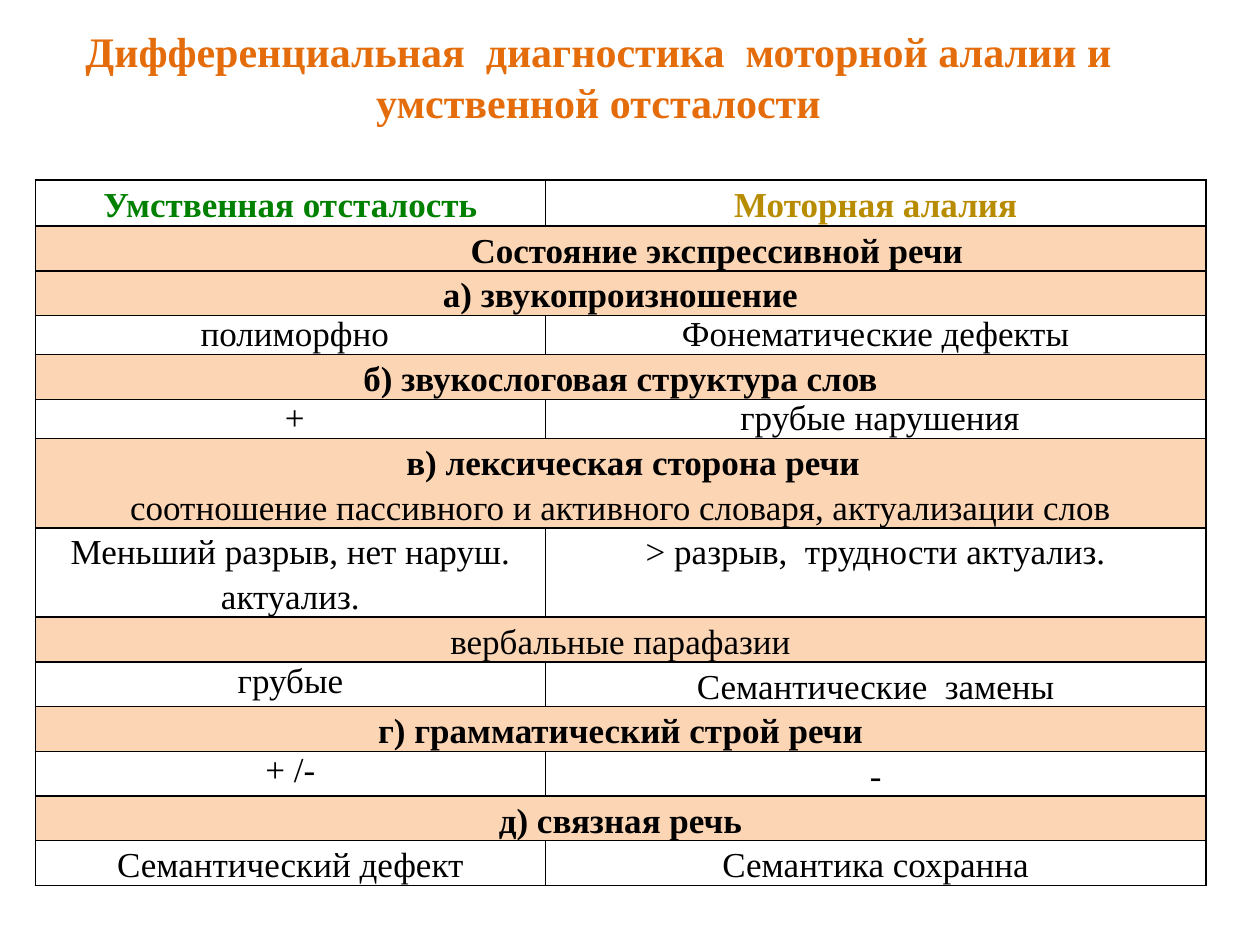
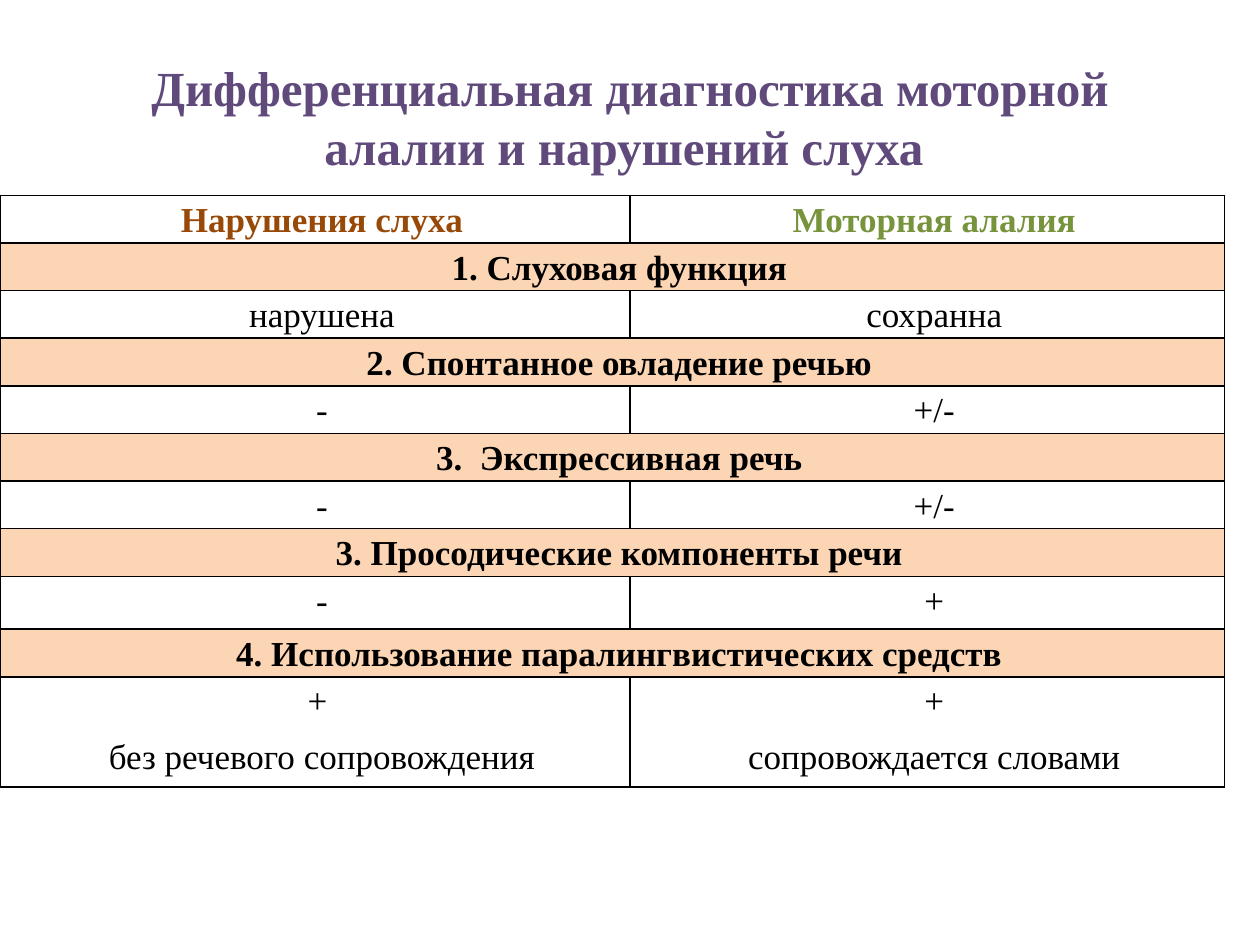
from dataclasses import dataclass

from lxml import etree
from pptx import Presentation
from pptx.dml.color import RGBColor
from pptx.enum.text import MSO_ANCHOR, MSO_AUTO_SIZE, PP_ALIGN
from pptx.oxml.ns import qn
from pptx.util import Inches, Pt

CENTER = PP_ALIGN.CENTER
MIDDLE = MSO_ANCHOR.MIDDLE
NO_AUTOFIT = MSO_AUTO_SIZE.NONE

FONT = "Times New Roman"
TEXT_SIZE = 20
COLORS = {
    "ink": "000000", "band": "FCD5B5", "orange": "E46C0A", "green": "008000",
    "gold": "B88C00", "purple": "604A7B", "brown": "984807", "olive": "77933C",
}
# One grid cell is a tenth of an inch on each side
GRID_COLUMNS, GRID_ROWS = 100, 75
TITLE_ONLY = 5


@dataclass
class Line:
    """One paragraph of a table cell."""
    text: str
    bold: bool = False
    color: str = "ink"
    spacing: float = 1.15
    margin: float = 0


@dataclass
class CellStyle:
    """What all cells of one table share; lengths in grid columns."""
    inset: float
    indent: float = 0
    before: float = 0


def strong(text, color="ink", margin=0):
    return Line(text, True, color, margin=margin)


def tight(text):
    return Line(text, spacing=1.0)


class SlideBuilder:
    def __init__(self, deck):
        self.deck = deck
        self.page = None

    def across(self, columns):
        return round(self.deck.slide_width * columns / GRID_COLUMNS)

    def down(self, rows):
        return round(self.deck.slide_height * rows / GRID_ROWS)

    def new_page(self):
        self.page = self.deck.slides.add_slide(self.deck.slide_layouts[TITLE_ONLY])

    def format_span(self, span, size, color, bold):
        font = span.font
        font.name, font.size, font.bold = FONT, Pt(size), bold
        font.color.rgb = RGBColor.from_string(COLORS[color])

    def title(self, text, left, top, width, height, size, color):
        box = self.page.shapes.title
        box.left, box.top = self.across(left), self.down(top)
        box.width, box.height = self.across(width), self.down(height)
        frame = box.text_frame
        frame.text = text
        frame.auto_size, frame.vertical_anchor = NO_AUTOFIT, MIDDLE
        para = frame.paragraphs[0]
        para.alignment = CENTER
        self.format_span(para.runs[0], size, color, True)

    def border(self, cell):
        properties = cell._tc.get_or_add_tcPr()
        for position, side in enumerate(("lnL", "lnR", "lnT", "lnB")):
            line = etree.Element(qn(f"a:{side}"), w=str(Pt(1)))
            fill = etree.SubElement(line, qn("a:solidFill"))
            etree.SubElement(fill, qn("a:srgbClr"), val=COLORS["ink"])
            properties.insert(position, line)

    def write_cell(self, cell, content, style):
        lines = content if isinstance(content, list) else [content]
        lines = [Line(line) if isinstance(line, str) else line for line in lines]
        cell.text_frame.text = "\n".join(line.text for line in lines)
        for para, line in zip(cell.text_frame.paragraphs, lines):
            para.alignment = CENTER
            para.line_spacing = line.spacing
            para.space_before = Pt(style.before)
            indents = para._p.get_or_add_pPr()
            indents.set("marL", str(self.across(line.margin)))
            indents.set("indent", str(self.across(style.indent)))
            self.format_span(para.runs[0], TEXT_SIZE, line.color, line.bold)

    def table(self, left, top, widths, rows, style):
        """Each row is a height and one cell (a band) or two cells."""
        height = sum(row[0] for row in rows)
        table = self.page.shapes.add_table(
            len(rows), len(widths), self.across(left), self.down(top),
            self.across(sum(widths)), self.down(height)).table
        table.first_row = table.horz_banding = False
        for column, width in zip(table.columns, widths):
            column.width = self.across(width)
        for index, (row_height, *contents) in enumerate(rows):
            table.rows[index].height = self.down(row_height)
            cells = [table.cell(index, column) for column in range(len(widths))]
            is_band = len(contents) == 1
            for cell in cells:
                cell.margin_left = cell.margin_right = self.across(style.inset)
                cell.margin_top = cell.margin_bottom = 0
                self.border(cell)
                if is_band:
                    cell.fill.solid()
                    cell.fill.fore_color.rgb = RGBColor.from_string(COLORS["band"])
                else:
                    cell.fill.background()
            if is_band:
                cells[0].merge(cells[-1])
            for cell, content in zip(cells, contents):
                self.write_cell(cell, content, style)


def intellectual_disability_page(builder):
    single, compact, double = 3.55, 3.1, 7.1
    builder.new_page()
    builder.title("Дифференциальная  диагностика  моторной алалии и умственной отсталости",
                  0, 3, 95, 6.1, 24, "orange")
    rows = [
        (3.65, strong("Умственная отсталость", "green"), strong("Моторная алалия", "gold")),
        (single, strong("Состояние экспрессивной речи", margin=15.3)),
        (single, strong("а) звукопроизношение")),
        (compact, tight(" полиморфно"), tight("Фонематические дефекты")),
        (single, strong("б) звукослоговая структура слов")),
        (compact, tight(" +"), tight(" грубые нарушения")),
        (double, [strong("в) лексическая сторона речи", margin=2),
                  "соотношение пассивного и активного словаря, актуализации слов"]),
        (double, "Меньший разрыв, нет наруш. актуализ.", "> разрыв,  трудности актуализ."),
        (single, "вербальные парафазии"),
        (single, tight("грубые"), "Семантические  замены"),
        (single, strong("г) грамматический строй речи")),
        (single, tight("+ /-"), "-"),
        (single, strong("д) связная речь")),
        (single, "Семантический дефект", "Семантика сохранна"),
    ]
    builder.table(2.8, 14.3, (40.5, 52.4), rows, CellStyle(inset=0.5))


def hearing_loss_page(builder):
    single = 3.78
    builder.new_page()
    builder.title("Дифференциальная диагностика моторной алалии и нарушений слуха ",
                  5, 3, 90, 12.5, 28, "purple")
    rows = [
        (single, strong("Нарушения слуха", "brown"), strong("Моторная алалия", "olive")),
        (single, strong("1. Слуховая функция")),
        (single, "нарушена", "сохранна"),
        (single, strong("2. Спонтанное овладение речью")),
        (single, "-", "+/-"),
        (single, strong("3.  Экспрессивная речь")),
        (single, "-", "+/-"),
        (single, strong("3. Просодические компоненты речи")),
        (4.2, "-", "+"),
        (single, strong("4. Использование паралингвистических средств")),
        (8.75, ["+ ", "без речевого сопровождения"], ["+", "сопровождается словами"]),
    ]
    builder.table(0, 15.5, (50, 47.2), rows, CellStyle(inset=0.6, indent=1.1, before=6))


def main():
    deck = Presentation()
    deck.slide_width, deck.slide_height = Inches(10), Inches(7.5)
    builder = SlideBuilder(deck)
    intellectual_disability_page(builder)
    hearing_loss_page(builder)
    deck.save("out.pptx")


if __name__ == "__main__":
    main()
